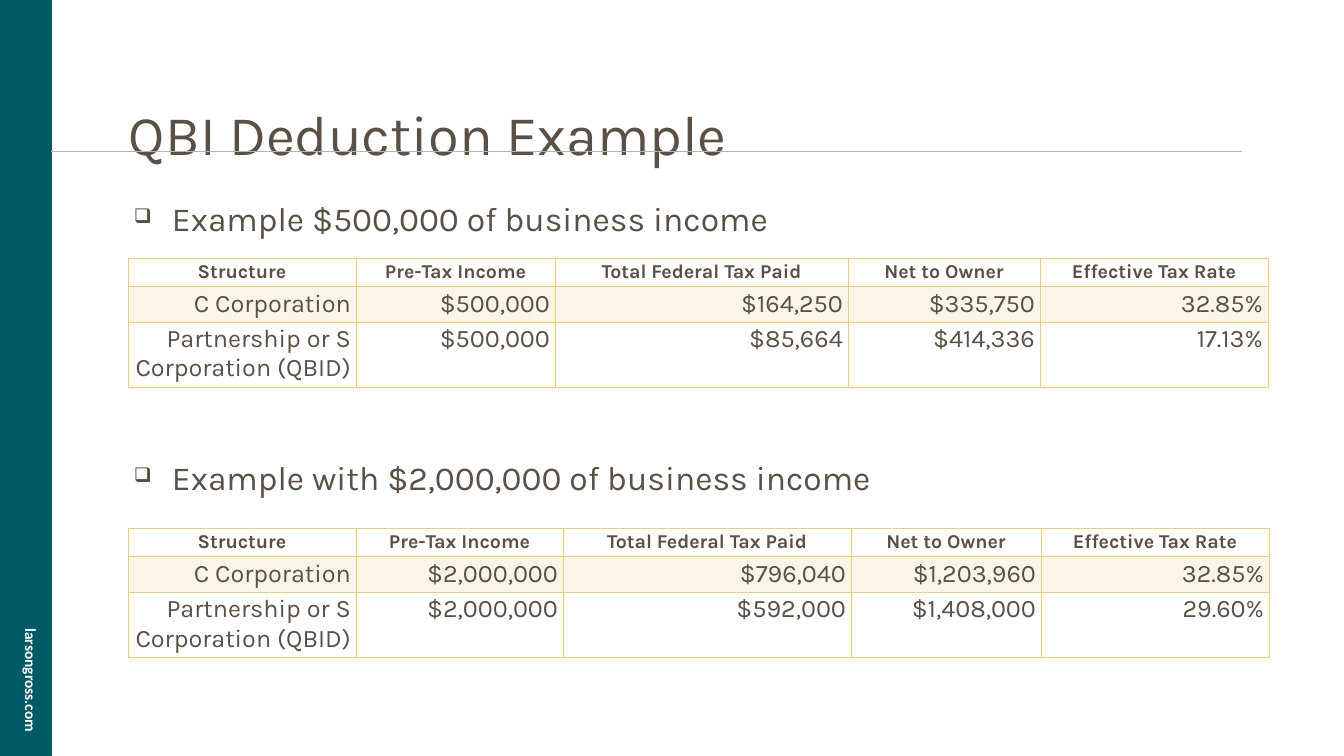
from lxml.etree import SubElement
from pptx import Presentation
from pptx.dml.color import RGBColor
from pptx.enum.shapes import MSO_CONNECTOR, MSO_SHAPE
from pptx.enum.text import MSO_ANCHOR, MSO_AUTO_SIZE, PP_ALIGN
from pptx.oxml.ns import qn
from pptx.util import Pt

SCALE = 914400 / 50.4
INK, TEAL, GOLD, GREY, WHITE = "5B5045", "005A65", "EDCD82", "B4B4B4", "FFFFFF"
HEAD = ["Structure", "Pre-Tax Income", "Total Federal Tax Paid", "Net to Owner", "Effective Tax Rate"]
CORP, PASS = "C Corporation", "Partnership or S Corporation (QBID)"


def px(n):
    return round(n * SCALE)


def box(*nums):
    return [px(n) for n in nums]


def color(code):
    return RGBColor.from_string(code)


def style(para, size, code=INK, bold=False, face="Karla"):
    for run in para.runs:
        font = run.font
        font.name, font.size, font.bold = face, Pt(size), bold
        font.color.rgb = color(code)


def inset(frame, n):
    frame.margin_left = frame.margin_right = px(n)
    frame.margin_top = frame.margin_bottom = px(n)


def add_side(slide, x, y, w, h):
    bar = slide.shapes.add_shape(MSO_SHAPE.RECTANGLE, *box(x, y, w, h))
    bar.shadow.inherit = False
    bar.fill.solid()
    bar.fill.fore_color.rgb = color(TEAL)
    bar.line.fill.background()
    label = slide.shapes.add_textbox(*box(x - 30, y + 677, 119, 22))
    label.rotation = 90
    frame = label.text_frame
    inset(frame, 0)
    frame.word_wrap = True
    frame.text = "larsongross.com"
    style(frame.paragraphs[0], 22, WHITE, True, "Calibri")


def add_title(slide, x, y, w, h):
    rule = slide.shapes.add_connector(MSO_CONNECTOR.STRAIGHT, *box(x - 78, y + 56, x + 1113, y + 56))
    rule.line.color.rgb = color(GREY)
    rule.line.width = Pt(0.75)
    SubElement(rule.element.spPr, qn("a:effectLst"))
    title = slide.shapes.title
    title.left, title.top, title.width, title.height = box(x, y, w, h)
    frame = title.text_frame
    frame.auto_size = MSO_AUTO_SIZE.NONE
    frame.vertical_anchor = MSO_ANCHOR.BOTTOM
    inset(frame, 0)
    frame.text = "QBI Deduction Example"
    para = frame.paragraphs[0]
    para.alignment = PP_ALIGN.LEFT
    style(para, 80)


def add_list(slide, x, y, w, h, items, gap):
    frame = slide.shapes.add_textbox(*box(x, y, w, h)).text_frame
    frame.word_wrap = True
    for i, item in enumerate(items):
        para = frame.add_paragraph() if i else frame.paragraphs[0]
        para.text = item
        props = para._p.get_or_add_pPr()
        props.set("marL", str(px(38)))
        props.set("indent", str(-px(38)))
        SubElement(props, qn("a:buSzPct"), val="60000")
        SubElement(props, qn("a:buChar"), char="❑")
        para.line_spacing = 0.9
        if i:
            para.space_before = Pt(gap)
        style(para, 48)


def edge(cell, low):
    props = cell._tc.get_or_add_tcPr()
    for side, wide in zip("LRTB", (1, 1, 1, low)):
        line = SubElement(props, qn("a:ln" + side), w=str(Pt(wide)))
        SubElement(SubElement(line, qn("a:solidFill")), qn("a:srgbClr"), val=GOLD)


def tint(cell):
    cell.fill.solid()
    cell.fill.fore_color.rgb = color(GOLD)
    tone = cell._tc.tcPr.find(qn("a:solidFill")).find(qn("a:srgbClr"))
    SubElement(tone, qn("a:alpha"), val="20000")


def add_grid(slide, x, y, cols, rows):
    highs = [28, 34, 64]
    data = [HEAD] + rows
    shape = slide.shapes.add_table(len(data), len(cols), *box(x, y, sum(cols), sum(highs)))
    table = shape.table
    table.first_row = table.horz_banding = False
    for col, wide in zip(table.columns, cols):
        col.width = px(wide)
    for r, row in enumerate(data):
        table.rows[r].height = px(highs[r])
        for c, text in enumerate(row):
            cell = table.cell(r, c)
            edge(cell, 1 if r else 2)
            if r == 1:
                tint(cell)
            else:
                cell.fill.background()
            cell.text_frame.text = text
            para = cell.text_frame.paragraphs[0]
            para.alignment = PP_ALIGN.RIGHT if r else PP_ALIGN.CENTER
            style(para, 36 if r else 28, bold=not r)


def main():
    deck = Presentation()
    deck.slide_width, deck.slide_height = box(1344, 756)
    slide = deck.slides.add_slide(deck.slide_layouts[5])
    add_side(slide, 0, 0, 52, 756)
    add_title(slide, 129, 95, 1148, 72)
    add_list(slide, 129, 200, 1166, 551, [
        "Example $500,000 of business income",
        "Example with $2,000,000 of business income",
    ], 318)
    add_grid(slide, 128, 258, [228, 199, 293, 192, 228], [
        [CORP, "$500,000", "$164,250", "$335,750", "32.85%"],
        [PASS, "$500,000", "$85,664", "$414,336", "17.13%"],
    ])
    add_grid(slide, 128, 528, [228, 207, 288, 190, 228], [
        [CORP, "$2,000,000", "$796,040", "$1,203,960", "32.85%"],
        [PASS, "$2,000,000", "$592,000", "$1,408,000", "29.60%"],
    ])
    deck.save("out.pptx")


if __name__ == "__main__":
    main()
